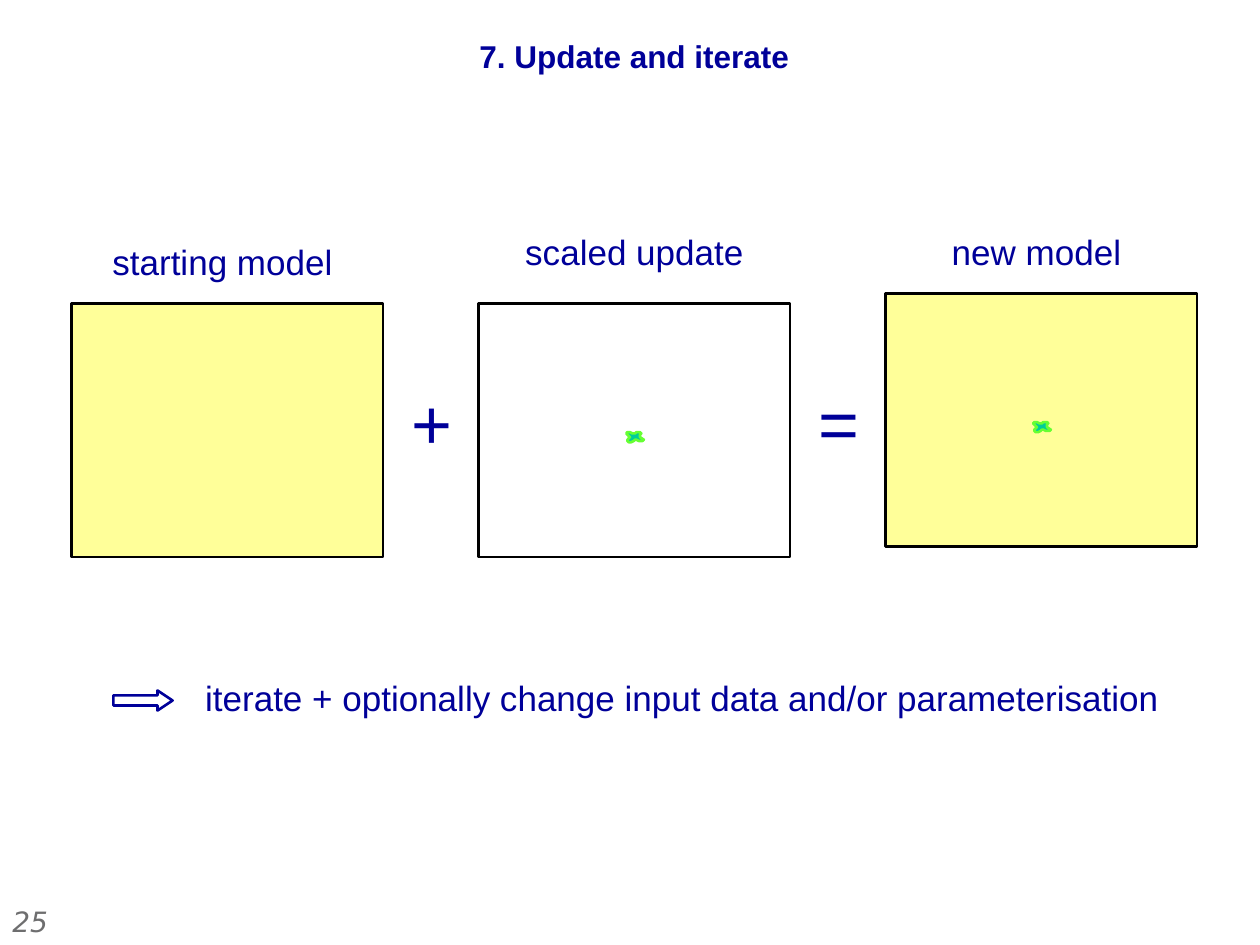
from pptx import Presentation
from pptx.dml.color import RGBColor as RGB
from pptx.enum.shapes import MSO_SHAPE as Shape
from pptx.enum.text import PP_ALIGN as Align
from pptx.util import Inches, Pt

COLS, ROWS = 100, 75
UNIT = Inches(10) // COLS
COLORS = {
    "navy": "000099", "grey": "6E6E6F", "black": "000000", "white": "FFFFFF",
    "model": "FFFF99", "blob": "00CC99", "rim": "66FF33",
}
PANEL_W, PANEL_H, PANEL_STEP = 24.7, 20.1, 32.3
BLOB_POINTS = [
    (5, 1), (7, 1), (8, 0), (11, 0), (12, 1), (11, 2), (11, 3), (11, 4),
    (14, 6), (13, 7), (10, 7), (8, 6), (7, 6), (6, 7), (4, 8), (2, 8),
    (1, 7), (1, 6), (2, 5), (3, 4), (1, 2), (0, 1), (1, 0), (3, 0),
]


def grid(*units):
    return [round(u * UNIT) for u in units]


def rgb(name):
    return RGB.from_string(COLORS[name])


def paint(sp, fill, line):
    sp.shadow.inherit = False
    if fill:
        sp.fill.solid()
        sp.fill.fore_color.rgb = rgb(fill)
    else:
        sp.fill.background()
    sp.line.color.rgb = rgb(line)
    sp.line.width = Pt(1.5)


def add_text(slide, box, text, size, align=Align.CENTER, color="navy",
             font="Arial", bold=False, italic=False):
    tf = slide.shapes.add_textbox(*grid(*box)).text_frame
    tf.word_wrap = True
    p = tf.paragraphs[0]
    p.text = text
    p.alignment = align
    f = p.runs[0].font
    f.name, f.size, f.bold, f.italic = font, Pt(size), bold, italic
    f.color.rgb = rgb(color)
    return p


def add_blob(slide, x, y):
    left, top = grid(x, y)
    scale = UNIT / 10
    fb = slide.shapes.build_freeform(*BLOB_POINTS[0], scale=scale)
    fb.add_line_segments(BLOB_POINTS[1:], close=True)
    paint(fb.convert_to_shape(left, top), "blob", "rim")


def add_panel(slide, x, y, label, label_rise, fill, blob):
    sp = slide.shapes.add_shape(Shape.RECTANGLE, *grid(x, y, PANEL_W, PANEL_H))
    paint(sp, fill, "black")
    if blob:
        add_blob(slide, x + 11.7, y + 10.2)
    add_text(slide, (x - 2.2, y - label_rise, 29.1, 4.3), label, 20)


def add_equation(slide, x, y):
    panels = [
        (0, "starting model ", 5.5, "model", False),
        (0, "scaled update", 6.3, None, True),
        (-0.8, "new model ", 5.5, "model", True),
    ]
    for i, (shift, *panel) in enumerate(panels):
        add_panel(slide, x + i * PANEL_STEP, y + shift, *panel)
    for i, sign in enumerate("+="):
        left = x + i * PANEL_STEP + PANEL_W - 0.1
        add_text(slide, (left, y + 5.5, 7.9, 7.7), sign, 40)


def add_conclusion(slide, x, y):
    sp = slide.shapes.add_shape(Shape.RIGHT_ARROW, *grid(x, y + 1.6, 4.7, 1.6))
    sp.adjustments[0], sp.adjustments[1] = 0.5, 0.75
    paint(sp, "white", "navy")
    add_text(slide, (x + 6.3, y, 79.5, 4.4),
             "iterate + optionally change input data and/or parameterisation",
             20, Align.LEFT)


def main():
    prs = Presentation()
    prs.slide_width, prs.slide_height = grid(COLS, ROWS)
    slide = prs.slides.add_slide(prs.slide_layouts[6])
    add_text(slide, (0, 71.3, 7.9, 3.7), "25", 16, Align.LEFT, "grey",
             "DejaVu Sans", italic=True)
    title = add_text(slide, (7.5, 2.8, 85, 6.3), " 7. Update and iterate", 18,
                     bold=True)
    title.line_spacing = 0.9
    add_equation(slide, 5.7, 24.1)
    add_conclusion(slide, 9, 53.2)
    prs.save("out.pptx")


if __name__ == "__main__":
    main()
